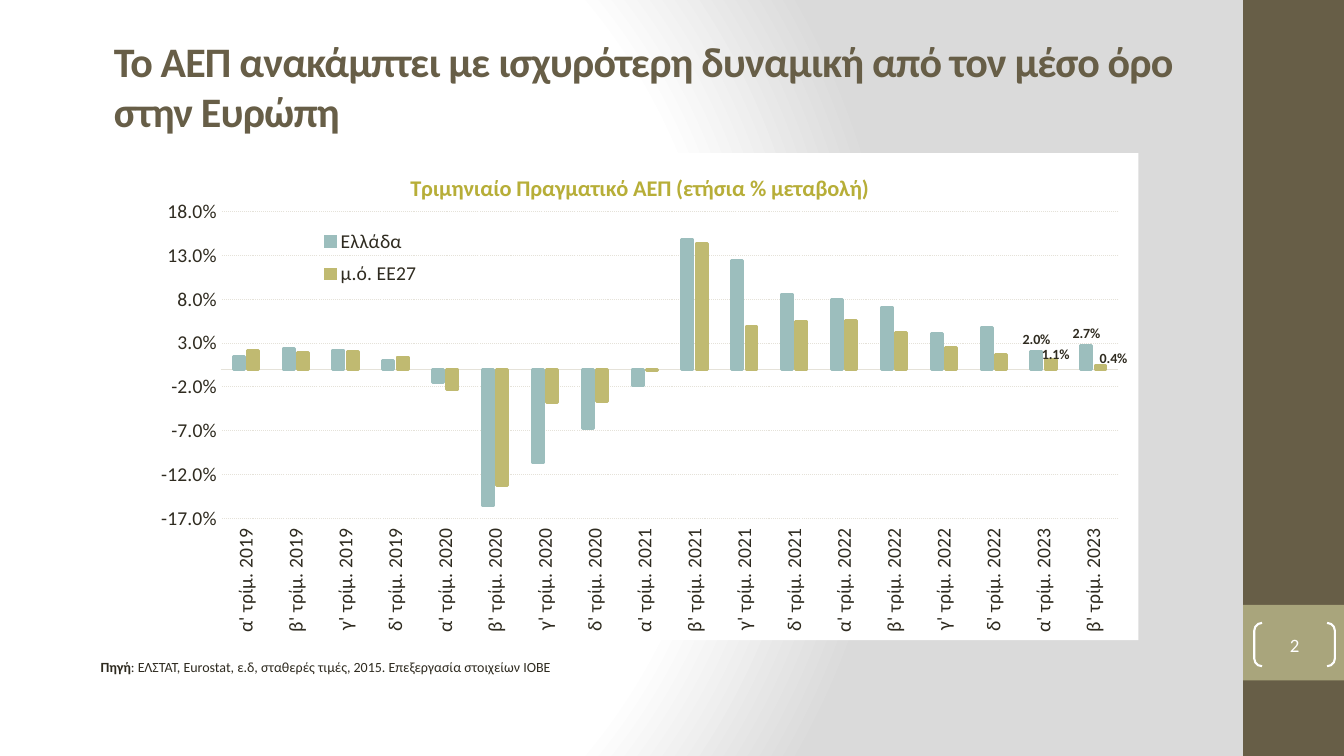
"""Build the slide on quarterly GDP growth in Greece and the EU27."""
from dataclasses import dataclass
from itertools import product

from pptx import Presentation
from pptx import util as u
from pptx.chart import data as cd
from pptx.dml.color import RGBColor
from pptx.enum import chart as ch, dml, shapes, text
from pptx.oxml import parse_xml
from pptx.oxml.ns import nsdecls, qn

PX = 9144


@dataclass(frozen=True)
class Theme:
    font: str = "Calibri"
    ink: str = "2F2B20"
    brown: str = "675E47"
    khaki: str = "A9A57C"
    white: str = "FFFFFF"
    grey: str = "DADADA"
    grid: str = "E5E2D9"
    olive: str = "B7AE38"
    teal: str = "9CBEBD"
    gold: str = "C0BA71"
    head: float = 30
    sub: float = 16
    body: float = 14
    page: float = 13.5
    small: float = 10


@dataclass(frozen=True)
class Box:
    left: int
    top: int
    width: int
    height: int

    def emu(self) -> list[u.Emu]:
        return [u.Emu(n * PX) for n in (self.left, self.top, self.width, self.height)]


@dataclass(frozen=True)
class Band:
    box: Box
    color: str


@dataclass(frozen=True)
class Land:
    name: str
    color: str
    rates: tuple[float, ...]
    shifts: tuple[tuple[float, float], ...]


T = Theme()
BANDS = (
    Band(Box(1233, 0, 100, 750), T.brown),
    Band(Box(1233, 600, 100, 75), T.khaki),
)
LANDS = (
    Land("Ελλάδα", T.teal,
         (1.5, 2.4, 2.2, 1.0, -1.5, -15.6, -10.7, -6.8, -1.9,
          14.8, 12.4, 8.6, 8.0, 7.1, 4.1, 4.8, 2.0, 2.7),
         ((0, 0), (0, 0))),
    Land("μ.ό. ΕΕ27", T.gold,
         (2.1, 1.9, 2.0, 1.4, -2.3, -13.3, -3.8, -3.7, -0.1,
          14.4, 4.9, 5.5, 5.6, 4.2, 2.5, 1.7, 1.1, 0.4),
         ((0.005, 0.014), (0.013, 0.01))),
)
TERMS = [f"{q}' τρίμ. {y}" for y, q in product(range(2019, 2024), "αβγδ")][:18]


def rgb(code: str) -> RGBColor:
    return RGBColor.from_string(code)


def style(font, size: float, color: str, bold: bool = False) -> None:
    font.name, font.size, font.bold = T.font, u.Pt(size), bold
    font.color.rgb = rgb(color)


def write(para, words: str, *, size: float, color: str,
          bold: bool = False, track: int = 0) -> None:
    run = para.add_run()
    run.text = words
    style(run.font, size, color, bold)
    if track:
        run.font._element.set("spc", str(track))


def paint(slide) -> None:
    slide.background.fill.gradient()
    old = slide.element.find(".//" + qn("a:gradFill"))
    stops = "".join(
        f'<a:gs pos="{pos * 1000}"><a:srgbClr val="{color}"/></a:gs>'
        for pos, color in ((0, T.white), (75, T.white), (100, T.grey)))
    new = parse_xml(
        f'<a:gradFill {nsdecls("a")} rotWithShape="1"><a:gsLst>{stops}</a:gsLst>'
        '<a:path path="circle"><a:fillToRect l="20000" t="50000" r="100000" b="50000"/>'
        '</a:path></a:gradFill>')
    old.getparent().replace(old, new)


def strip(slide, band: Band) -> None:
    shape = slide.shapes.add_shape(shapes.MSO_SHAPE.RECTANGLE, *band.box.emu())
    shape.shadow.inherit = False
    shape.fill.solid()
    shape.fill.fore_color.rgb = rgb(band.color)
    shape.line.fill.background()


def badge(slide) -> None:
    shape = slide.shapes.add_shape(
        shapes.MSO_SHAPE.DOUBLE_BRACKET, *Box(1244, 618, 80, 43).emu())
    shape.shadow.inherit = False
    shape.adjustments[0] = 0.18
    shape.fill.background()
    shape.line.color.rgb = rgb(T.white)
    shape.line.width = u.Pt(1.5)
    frame = shape.text_frame
    frame.margin_left = frame.margin_right = frame.margin_top = frame.margin_bottom = 0
    frame.vertical_anchor = text.MSO_ANCHOR.MIDDLE
    frame.paragraphs[0].alignment = text.PP_ALIGN.CENTER
    write(frame.paragraphs[0], "2", size=T.page, color=T.white)


def panel(slide, box: Box):
    frame = slide.shapes.add_textbox(*box.emu()).text_frame
    frame.word_wrap = True
    return frame.paragraphs[0]


def place(owner, index: int, *, target: str = "", **spots: float) -> None:
    for old in owner.findall(qn("c:layout")):
        owner.remove(old)
    inner = f'<c:layoutTarget val="{target}"/>' if target else ""
    if target or "w" in spots:
        inner += '<c:xMode val="edge"/><c:yMode val="edge"/>'
    inner += "".join(f'<c:{key} val="{val}"/>' for key, val in spots.items())
    owner.insert(index, parse_xml(
        f'<c:layout {nsdecls("c")}><c:manualLayout>{inner}</c:manualLayout></c:layout>'))


def axes(chart) -> None:
    cat, val = chart.category_axis, chart.value_axis
    for axis in (cat, val):
        axis.major_tick_mark = axis.minor_tick_mark = ch.XL_TICK_MARK.NONE
        style(axis.tick_labels.font, T.body, T.ink)
    cat.tick_label_position = ch.XL_TICK_LABEL_POSITION.LOW
    chart.element.xpath(".//c:catAx/c:txPr/a:bodyPr")[0].set("rot", "-5400000")
    val.minimum_scale, val.maximum_scale, val.major_unit = -0.17, 0.18, 0.05
    val.tick_labels.number_format = "0.0%"
    val.tick_labels.number_format_is_linked = False
    val.format.line.fill.background()
    for line in (cat.format.line, val.major_gridlines.format.line):
        line.color.rgb = rgb(T.grid)
        line.width = u.Pt(0.75)
    val.major_gridlines.format.line.dash_style = dml.MSO_LINE.ROUND_DOT


def bars(series, land: Land) -> None:
    series.invert_if_negative = False
    series.format.fill.solid()
    series.format.fill.fore_color.rgb = rgb(land.color)
    series.format.line.color.rgb = rgb(land.color)
    series.format.line.width = u.Pt(2)
    series.data_labels.show_value = False
    for spot, (x, y) in enumerate(land.shifts, len(TERMS) - len(land.shifts)):
        label = series.points[spot].data_label
        style(label.font, T.small, T.ink, True)
        label.position = ch.XL_LABEL_POSITION.OUTSIDE_END
        if x or y:
            node = series._element.xpath(f'.//c:dLbl[c:idx/@val="{spot}"]')[0]
            place(node, 1, x=x, y=y)


def graph(slide) -> None:
    data = cd.CategoryChartData(number_format="0.0%")
    data.categories = TERMS
    for land in LANDS:
        data.add_series(land.name, [round(rate / 100, 3) for rate in land.rates])
    chart = slide.shapes.add_chart(
        ch.XL_CHART_TYPE.COLUMN_CLUSTERED, *Box(140, 152, 989, 483).emu(), data).chart
    style(chart.font, T.body, T.ink)
    chart.element.find(qn("c:txPr")).addprevious(parse_xml(
        f'<c:spPr {nsdecls("c", "a")}><a:solidFill><a:srgbClr val="{T.white}"/>'
        '</a:solidFill><a:ln><a:noFill/></a:ln></c:spPr>'))
    chart.has_title = True
    write(chart.chart_title.text_frame.paragraphs[0],
          "Τριμηνιαίο Πραγματικό ΑΕΠ (ετήσια % μεταβολή)",
          size=T.sub, color=T.olive, bold=True)
    chart.has_legend = True
    chart.legend.position = ch.XL_LEGEND_POSITION.BOTTOM
    chart.legend.include_in_layout = False
    style(chart.legend.font, T.body, T.ink)
    place(chart.element.xpath(".//c:legend")[0], 1, x=0.17, y=0.14, w=0.12, h=0.15)
    place(chart.element.xpath(".//c:plotArea")[0], 0, target="inner",
          x=0.08, y=0.12, w=0.9, h=0.63)
    axes(chart)
    plot = chart.plots[0]
    plot.vary_by_categories = False
    plot.gap_width, plot.overlap = 219, -27
    for series, land in zip(plot.series, LANDS):
        bars(series, land)


def main() -> None:
    deck = Presentation()
    deck.slide_width, deck.slide_height = u.Emu(1333 * PX), u.Emu(750 * PX)
    slide = deck.slides.add_slide(deck.slide_layouts[6])
    paint(slide)
    for band in BANDS:
        strip(slide, band)
    badge(slide)
    note = panel(slide, Box(90, 648, 935, 27))
    write(note, "Πηγή", size=T.small, color=T.ink, bold=True)
    write(note, ": ΕΛΣΤΑΤ, Eurostat, ε.δ, σταθερές τιμές, 2015. Επεξεργασία στοιχείων ΙΟΒΕ",
          size=T.small, color=T.ink)
    write(panel(slide, Box(103, 30, 1118, 122)),
          "Το ΑΕΠ ανακάμπτει με ισχυρότερη δυναμική από τον μέσο όρο στην Ευρώπη",
          size=T.head, color=T.brown, bold=True, track=-60)
    graph(slide)
    deck.save("out.pptx")


if __name__ == "__main__":
    main()
